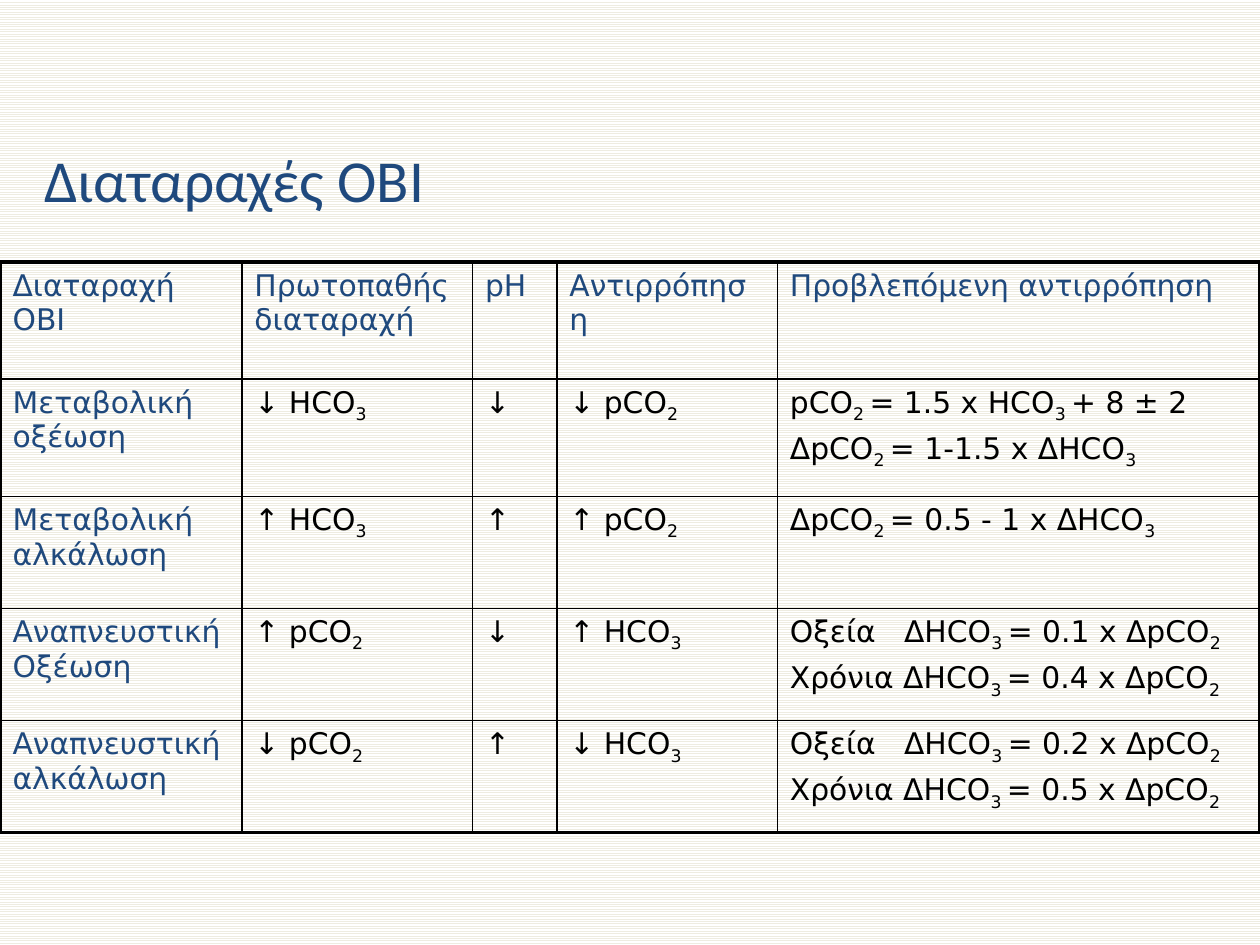
from lxml.etree import SubElement
from pptx import Presentation
from pptx.dml.color import RGBColor
from pptx.enum.dml import MSO_PATTERN
from pptx.enum.text import MSO_ANCHOR, PP_ALIGN
from pptx.oxml.ns import qn
from pptx.util import Inches, Pt

TITLE = "Διαταραχές ΟΒΙ"
HEADERS = ["Διαταραχή ΟΒΙ", "Πρωτοπαθής διαταραχή", "pH", "Αντιρρόπηση",
           "Προβλεπόμενη αντιρρόπηση"]
# Text between bars is subscript; a line break starts a new paragraph.
DISORDERS = [
    ["Μεταβολική οξέωση", "↓ HCO|3|", "↓", "↓ pCO|2|",
     "pCO|2 |= 1.5 x HCO|3 |+ 8 ± 2\nΔpCO|2 |= 1-1.5 x ΔHCO|3|"],
    ["Μεταβολική αλκάλωση", "↑ HCO|3|", "↑", "↑ pCO|2|",
     "ΔpCO|2 |= 0.5 - 1 x ΔHCO|3|"],
    ["Αναπνευστική Οξέωση", "↑ pCO|2|", "↓", "↑ HCO|3|",
     "Οξεία   ΔHCO|3 |= 0.1 x ΔpCO|2|\nΧρόνια ΔHCO|3 |= 0.4 x ΔpCO|2|"],
    ["Αναπνευστική αλκάλωση", "↓ pCO|2|", "↑", "↓ HCO|3|",
     "Οξεία   ΔHCO|3 |= 0.2 x ΔpCO|2|\nΧρόνια ΔHCO|3 |= 0.5 x ΔpCO|2|"],
]
COLUMN_WIDTHS = [1.92, 1.83, 0.67, 1.75, 3.83]
ROW_HEIGHTS = [0.93, 0.93, 0.89, 0.89, 0.89]
NAVY, BLACK, CREAM, WHITE = "1F497D", "000000", "EEECE1", "FFFFFF"
OUTER_LINE, INNER_LINE = 2.25, 1


def rgb(color):
    return RGBColor.from_string(color)


def style(font, name, size, color):
    font.name = name
    font.size = Pt(size)
    font.color.rgb = rgb(color)


def write_formula(cell, text, color):
    """Fill a cell, lowering the parts between bars to subscript."""
    frame = cell.text_frame
    for number, line in enumerate(text.split("\n")):
        paragraph = frame.add_paragraph() if number else frame.paragraphs[0]
        if number:
            paragraph.space_before = Pt(4)
        for position, part in enumerate(line.split("|")):
            if not part:
                continue
            run = paragraph.add_run()
            run.text = part
            style(run.font, "DejaVu Sans", 17, color)
            if position % 2:
                run.font._element.set("baseline", "-25000")


def draw_borders(cell, outer_sides):
    properties = cell._tc.get_or_add_tcPr()
    for side, is_outer in outer_sides.items():
        width = Pt(OUTER_LINE if is_outer else INNER_LINE)
        line = SubElement(properties, qn(f"a:ln{side}"), w=str(width))
        fill = SubElement(line, qn("a:solidFill"))
        SubElement(fill, qn("a:srgbClr"), val=BLACK)


def add_disorder_table(slide):
    rows = [HEADERS] + DISORDERS
    last_row, last_column = len(rows) - 1, len(HEADERS) - 1
    table = slide.shapes.add_table(
        len(rows), len(HEADERS), 0, Inches(2.08),
        Inches(sum(COLUMN_WIDTHS)), Inches(sum(ROW_HEIGHTS))).table
    table.first_row = table.horz_banding = False
    for column, width in zip(table.columns, COLUMN_WIDTHS):
        column.width = Inches(width)
    for row, height in zip(table.rows, ROW_HEIGHTS):
        row.height = Inches(height)
    for r, texts in enumerate(rows):
        for c, text in enumerate(texts):
            cell = table.cell(r, c)
            write_formula(cell, text, NAVY if r == 0 or c == 0 else BLACK)
            draw_borders(cell, {"L": c == 0, "R": c == last_column,
                                "T": r == 0, "B": r == last_row})
            cell.fill.background()


def main():
    prs = Presentation()
    prs.slide_width, prs.slide_height = Inches(10), Inches(7.5)
    slide = prs.slides.add_slide(prs.slide_layouts[5])

    backdrop = slide.background.fill
    backdrop.patterned()
    backdrop.pattern = MSO_PATTERN.LIGHT_HORIZONTAL
    backdrop.fore_color.rgb = rgb(CREAM)
    backdrop.back_color.rgb = rgb(WHITE)

    title = slide.shapes.title
    title.left, title.top = Inches(0.25), Inches(0.5)
    title.width, title.height = Inches(9.53), Inches(1.25)
    title.text_frame.text = TITLE
    title.text_frame.vertical_anchor = MSO_ANCHOR.BOTTOM
    heading = title.text_frame.paragraphs[0]
    heading.alignment = PP_ALIGN.LEFT
    style(heading.runs[0].font, "Calibri", 34, NAVY)

    add_disorder_table(slide)
    prs.save("out.pptx")


if __name__ == "__main__":
    main()
